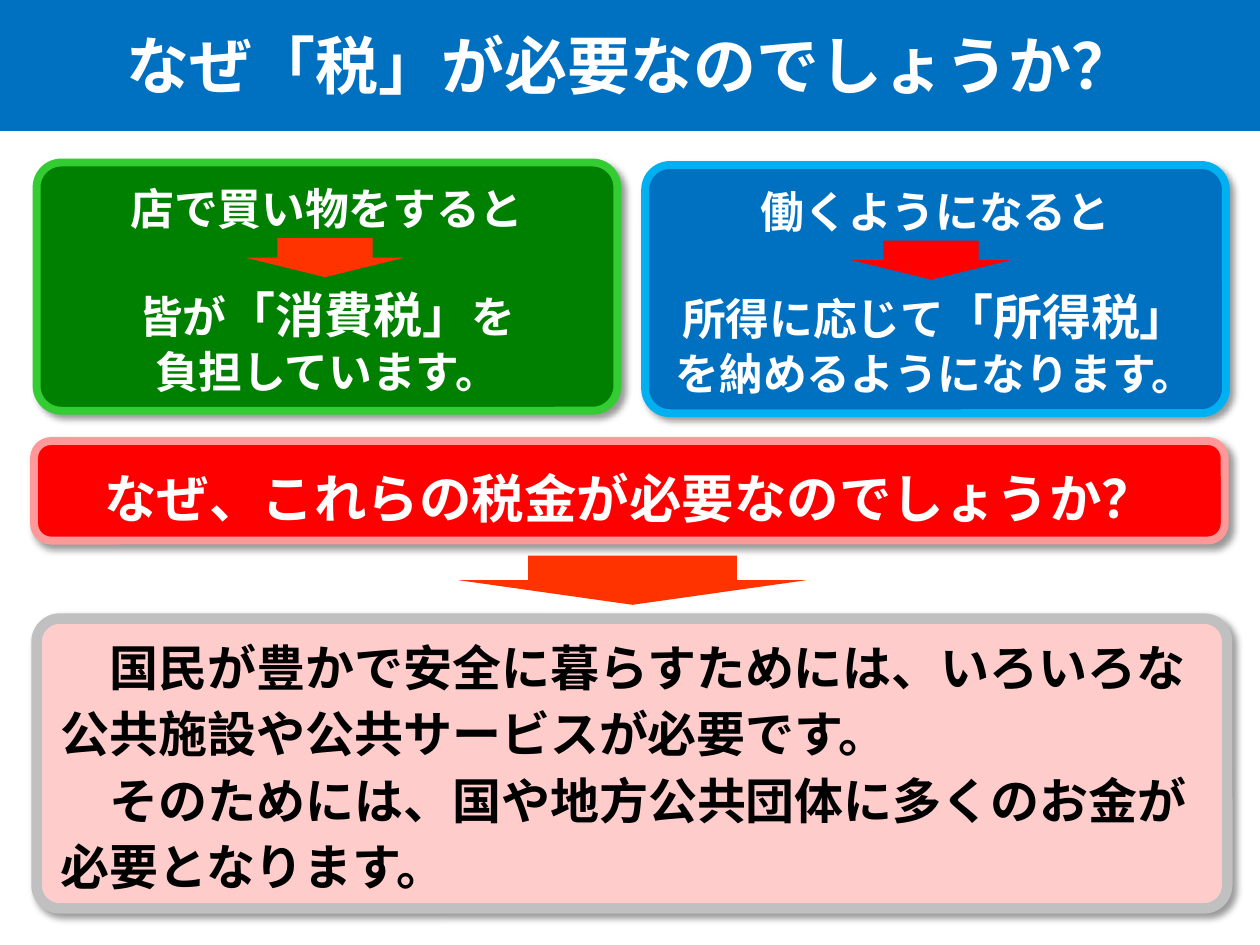
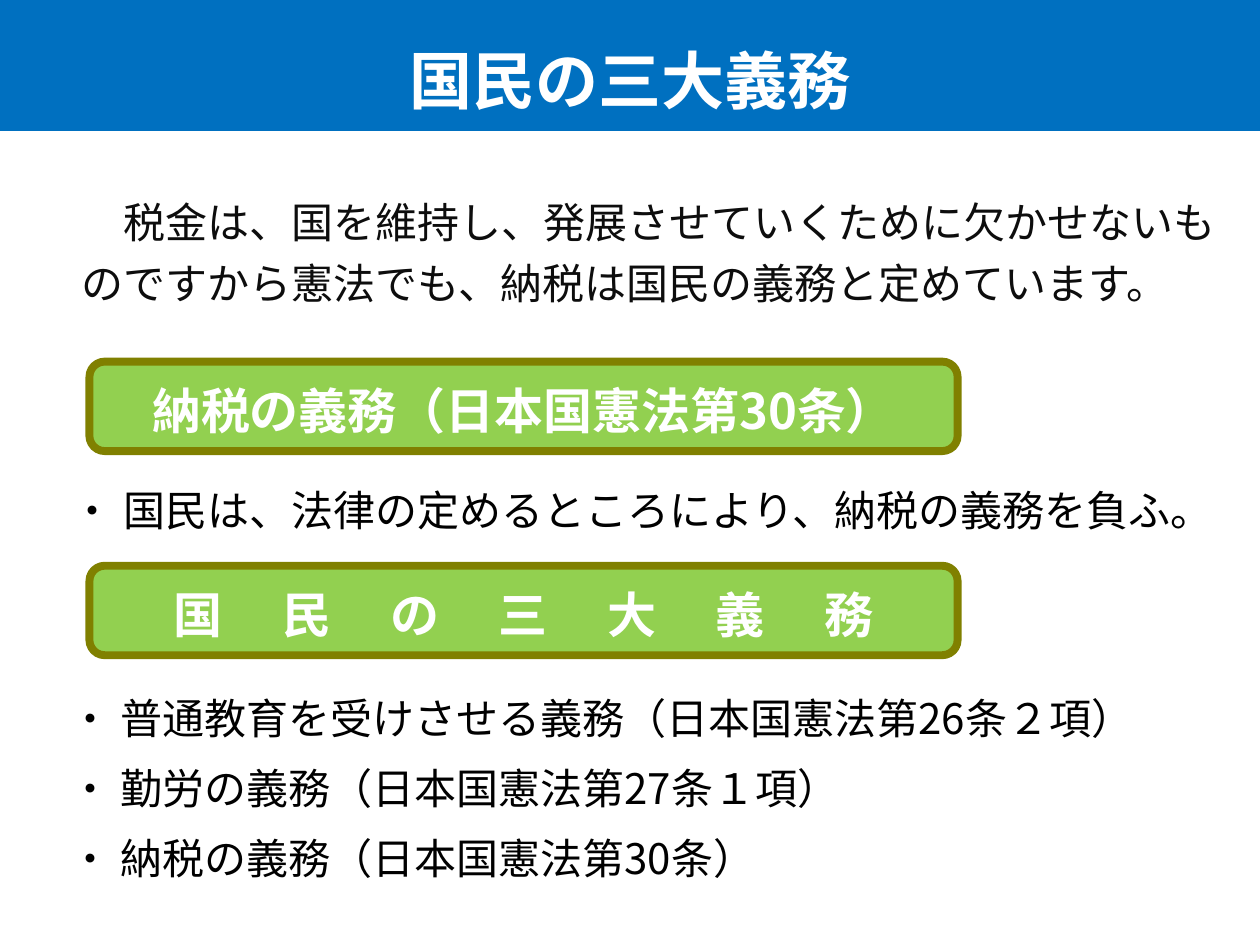
from dataclasses import dataclass

from lxml.etree import SubElement
from pptx import Presentation
from pptx.dml.color import RGBColor
from pptx.enum.shapes import MSO_SHAPE as Shape
from pptx.enum.text import MSO_ANCHOR as Anchor, MSO_AUTO_SIZE as AutoSize, PP_ALIGN as Align
from pptx.oxml.ns import qn
from pptx.util import Inches, Pt


@dataclass(frozen=True)
class Theme:
    font: str = "Noto Sans CJK JP"
    # Colours
    blue: str = "0070C0"
    sky: str = "00B0F0"
    green: str = "008000"
    bright_green: str = "33CC33"
    red: str = "FF0000"
    orange: str = "FF3300"
    rose: str = "FF9999"
    pink: str = "FFCCCC"
    grey: str = "C0C0C0"
    lime: str = "92D050"
    olive: str = "808000"
    white: str = "FFFFFF"
    black: str = "000000"
    ink: str = "0D0D0D"
    # Type sizes in points
    title: int = 36
    question: int = 30
    strong: int = 28
    card: int = 25
    text: int = 24


THEME = Theme()


class SlideBuilder:
    def __init__(self, deck, theme):
        self.deck, self.theme, self.page = deck, theme, None

    def new_page(self, layout, title, line_spacing=None):
        """Start a slide with the blue title band."""
        self.page = self.deck.slides.add_slide(self.deck.slide_layouts[layout])
        band = self.page.shapes.title
        self.place(band, (0, -0.02, 10, 1.06))
        self.paint(band, self.theme.blue)
        self.fill_text(band, [title], self.theme.title, self.theme.white, bold=True,
                       align=Align.CENTER, anchor=Anchor.MIDDLE, spacing=line_spacing)

    def place(self, box, at):
        box.left, box.top, box.width, box.height = map(Inches, at)

    def paint(self, box, fill, line=None, width=4.5):
        box.fill.solid()
        box.fill.fore_color.rgb = RGBColor.from_string(fill)
        if line:
            box.line.color.rgb = RGBColor.from_string(line)
            box.line.width = Pt(width)
        else:
            box.line.fill.background()

    def fill_text(self, box, paragraphs, size, color, bold=False, align=Align.LEFT,
                  anchor=Anchor.TOP, spacing=None, before=None, margin=0, indent=0):
        """Fill a box; a paragraph is a string or a list of strings and (text, size) pairs."""
        frame = box.text_frame
        frame.word_wrap = True
        frame.auto_size = AutoSize.NONE
        frame.vertical_anchor = anchor
        for index, content in enumerate(paragraphs):
            para = frame.add_paragraph() if index else frame.paragraphs[0]
            para.alignment, para.line_spacing, para.space_before = align, spacing, before
            font = para.font
            font.name, font.size, font.bold = self.theme.font, Pt(size), bold
            font.color.rgb = RGBColor.from_string(color)
            properties = para._p.get_or_add_pPr()
            properties.set("marL", str(Inches(margin)))
            properties.set("indent", str(Inches(indent)))
            properties.insert_element_before(
                properties.makeelement(qn("a:buNone")), "a:tabLst", "a:defRPr", "a:extLst")
            SubElement(properties.find(qn("a:defRPr")), qn("a:ea"), typeface=self.theme.font)
            for part in [content] if isinstance(content, str) else content:
                span = para.add_run()
                if isinstance(part, str):
                    span.text = part
                else:
                    span.text, span.font.size = part[0], Pt(part[1])
        return frame

    def panel(self, at, fill, line, width=4.5, corner=0.17, shadow=True, shapes=None):
        """Rounded box with a thick border."""
        shapes = shapes or self.page.shapes
        box = shapes.add_shape(Shape.ROUNDED_RECTANGLE, *map(Inches, at))
        box.adjustments[0] = corner
        self.paint(box, fill, line, width)
        box.shadow.inherit = False
        if shadow:
            effects = box._element.spPr.find(qn("a:effectLst"))
            outer = SubElement(effects, qn("a:outerShdw"), blurRad=str(Pt(4)), dist=str(Pt(3)),
                               dir="2700000", algn="tl", rotWithShape="0")
            tint = SubElement(outer, qn("a:srgbClr"), val=self.theme.black)
            SubElement(tint, qn("a:alpha"), val="40000")
        return box

    def arrow(self, at, fill, shapes=None):
        shapes = shapes or self.page.shapes
        arrow = shapes.add_shape(Shape.DOWN_ARROW, *map(Inches, at))
        arrow.adjustments[0], arrow.adjustments[1] = 0.6, 0.5
        self.paint(arrow, fill)
        arrow.shadow.inherit = False

    def tax_card(self, left, top, lines, fill, line, arrow_left, arrow_fill):
        """Situation, arrow and resulting tax, grouped."""
        shapes = self.page.shapes.add_group_shape().shapes
        box = self.panel((left, top, 4.61, 1.97), fill, line, corner=0.1, shapes=shapes)
        frame = self.fill_text(box, lines, self.theme.card, self.theme.white, bold=True,
                               align=Align.CENTER, anchor=Anchor.BOTTOM, spacing=Pt(31))
        frame.paragraphs[1].space_before = Pt(31)  # room for the arrow
        self.arrow((arrow_left, top + 0.6, 1.26, 0.31), arrow_fill, shapes)

    def duty_heading(self, top, content):
        box = self.panel((0.71, top, 6.89, 0.71), self.theme.lime, self.theme.olive, shadow=False)
        frame = self.fill_text(box, [content], self.theme.strong, self.theme.white, bold=True,
                               align=Align.CENTER, anchor=Anchor.MIDDLE, spacing=Pt(30))
        frame.margin_top = Inches(0.16)
        return frame

    def text(self, at, paragraphs, color, **style):
        box = self.page.shapes.add_textbox(*map(Inches, at))
        self.fill_text(box, paragraphs, self.theme.text, color, spacing=Pt(35), **style)


def why_taxes(builder):
    theme = builder.theme
    builder.new_page(5, "なぜ「税」が必要なのでしょうか？")

    # Two everyday taxes
    builder.tax_card(5.12, 1.31, ["働くようになると",
                                  ["所得に応じて", ("「所得税」", theme.strong)],
                                  "を納めるようになります。"],
                     theme.blue, theme.sky, 6.76, theme.red)
    builder.tax_card(0.29, 1.29, ["店で買い物をすると",
                                  ["皆が", ("「消費税」", theme.strong), "を"],
                                  "負担しています。"],
                     theme.green, theme.bright_green, 1.95, theme.orange)

    # Question and answer
    question = builder.panel((0.27, 3.5, 9.45, 0.79), theme.red, theme.rose)
    builder.fill_text(question, ["なぜ、これらの税金が必要なのでしょうか？"], theme.question,
                      theme.white, bold=True, align=Align.CENTER, anchor=Anchor.BOTTOM)
    answer = builder.panel((0.29, 4.91, 9.45, 2.3), theme.pink, theme.grey, 6, 0.08)
    builder.fill_text(answer,
                      ["国民が豊かで安全に暮らすためには、いろいろな公共施設や公共サービスが必要です。",
                       "そのためには、国や地方公共団体に多くのお金が必要となります。"],
                      theme.strong, theme.black, bold=True, anchor=Anchor.BOTTOM,
                      spacing=Pt(38), margin=0.04, indent=0.39)
    builder.arrow((3.64, 4.41, 2.76, 0.39), theme.orange)


def three_duties(builder):
    theme = builder.theme
    builder.new_page(1, "国民の三大義務", line_spacing=1.4)

    # Duty to pay taxes
    builder.duty_heading(2.87, "納税の義務（日本国憲法第30条）")
    body = builder.page.placeholders[1]
    builder.place(body, (0, 3.71, 9.65, 0.66))
    builder.fill_text(body, ["・ 国民は、法律の定めるところにより、納税の義務を負ふ。"], theme.text,
                      theme.black, spacing=Pt(35), before=Pt(10), margin=0.08, indent=0.39)

    # All three duties, under a letter-spaced heading
    heading = builder.duty_heading(4.49, ["国民の三大義", "務"])
    heading.paragraphs[0].runs[0].font._element.set("spc", "3400")
    builder.text((0.45, 5.36, 8.74, 1.61),
                 ["・ 普通教育を受けさせる義務（日本国憲法第26条２項）",
                  "・ 勤労の義務（日本国憲法第27条１項）",
                  "・ 納税の義務（日本国憲法第30条）"],
                 theme.black, before=Pt(5), margin=0.38, indent=-0.38)

    # Introduction
    builder.text((0.55, 1.42, 9.25, 1.08),
                 ["税金は、国を維持し、発展させていくために欠かせないものですから憲法でも、"
                  "納税は国民の義務と定めています。"],
                 theme.ink, anchor=Anchor.MIDDLE, indent=0.33)


def main():
    deck = Presentation()
    deck.slide_width, deck.slide_height = Inches(10), Inches(7.5)
    builder = SlideBuilder(deck, THEME)
    why_taxes(builder)
    three_duties(builder)
    deck.save("out.pptx")


if __name__ == "__main__":
    main()
